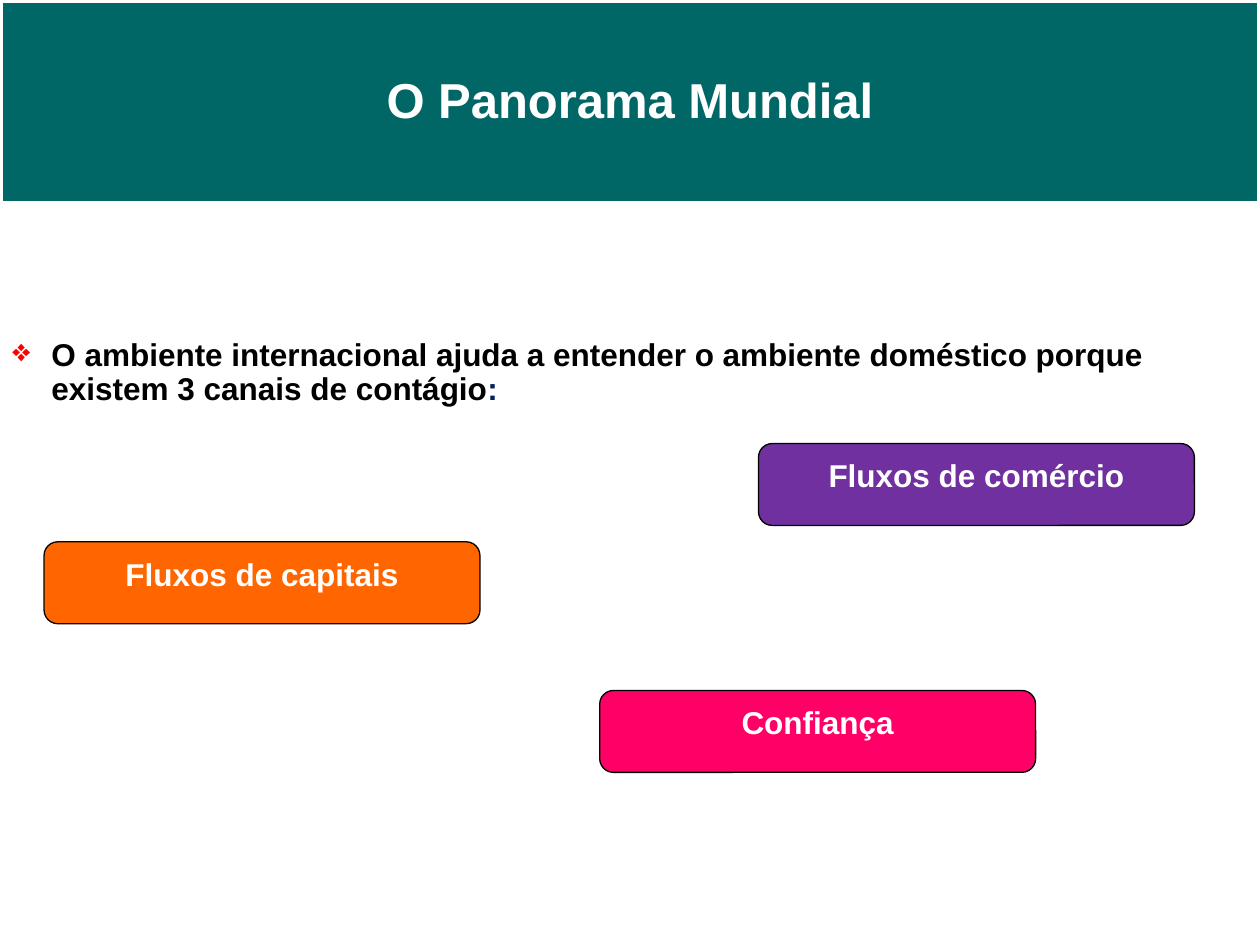
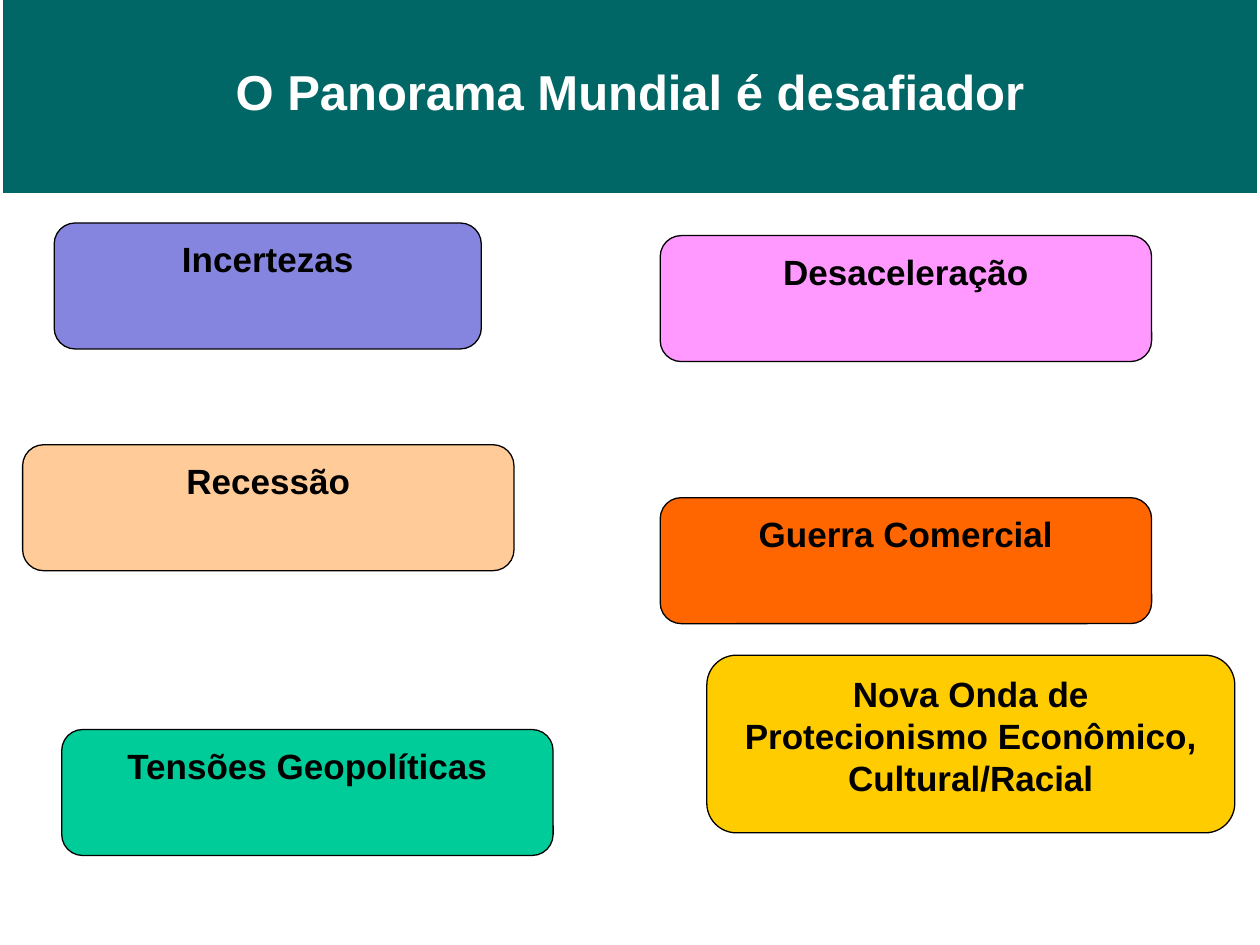
"""Build two slides on the world outlook and its channels of contagion."""
import pptx
import pptx.dml.color
import pptx.enum.shapes
import pptx.enum.text
import pptx.util
import lxml.etree
import pptx.oxml.ns

Inches = pptx.util.Inches
Pt = pptx.util.Pt
SHAPES = pptx.enum.shapes.MSO_SHAPE

TEAL, WHITE, BLACK, ORANGE = "006666", "FFFFFF", "000000", "FF6600"
BULLET_RED, NAVY = "FF0000", "002060"


def color(value):
    return pptx.dml.color.RGBColor.from_string(value)


def add_box(slide, kind, position, text, fill, line, size, font_color, top_inset):
    shape = slide.shapes.add_shape(kind, *[Inches(length) for length in position])
    shape.shadow.inherit = False
    shape.fill.solid()
    shape.fill.fore_color.rgb = color(fill)
    line_color, line_width = line
    shape.line.color.rgb = color(line_color)
    shape.line.width = Pt(line_width)
    frame = shape.text_frame
    frame.word_wrap = True
    frame.vertical_anchor = pptx.enum.text.MSO_ANCHOR.TOP
    frame.margin_top = Inches(top_inset)
    paragraph = frame.paragraphs[0]
    paragraph.text = text
    paragraph.alignment = pptx.enum.text.PP_ALIGN.CENTER
    paragraph.font.name = "Arial"
    paragraph.font.size = Pt(size)
    paragraph.font.bold = True
    paragraph.font.color.rgb = color(font_color)


presentation = pptx.Presentation()
presentation.slide_width = Inches(10)
presentation.slide_height = Inches(7.5)

channels = [
    ("Fluxos de comércio", (6.02, 3.52, 3.46, 0.65), "7030A0"),
    ("Fluxos de capitais", (0.35, 4.3, 3.46, 0.65), ORANGE),
    ("Confiança", (4.76, 5.48, 3.46, 0.65), "FF0066"),
]
challenges = [
    ("Incertezas", (0.43, 1.77, 3.39, 1), "8585E0"),
    ("Desaceleração", (5.24, 1.87, 3.9, 1), "FF99FF"),
    ("Recessão", (0.18, 3.53, 3.9, 1), "FFCC99"),
    ("Guerra Comercial", (5.24, 3.95, 3.9, 1), ORANGE),
    ("Tensões Geopolíticas", (0.49, 5.79, 3.9, 1), "00CC99"),
    ("Nova Onda de Protecionismo Econômico, Cultural/Racial", (5.61, 5.2, 4.19, 1.41), "FFCC00"),
]
contents = [
    ("O Panorama Mundial", (0, 0, 10, 1.62), channels, 18, WHITE),
    ("O Panorama Mundial é desafiador", (0, -0.06, 10, 1.61), challenges, 20, BLACK),
]

for title, band, boxes, size, font_color in contents:
    slide = presentation.slides.add_slide(presentation.slide_layouts[6])
    add_box(slide, SHAPES.RECTANGLE, band, title, TEAL, (WHITE, 3), 28, WHITE, 0.55)
    for text, position, fill in boxes:
        add_box(slide, SHAPES.ROUNDED_RECTANGLE, position, text, fill, (BLACK, 0.75), size, font_color, 0.07)

introduction = presentation.slides[0].shapes.add_textbox(Inches(0), Inches(2.64), Inches(9.76), Inches(0.65))
introduction.text_frame.word_wrap = True
paragraph = introduction.text_frame.paragraphs[0]
paragraph.line_spacing = 0.9
paragraph.font.name = "Arial"
paragraph.font.size = Pt(18)
paragraph.font.bold = True
for text, run_color in [
    ("O ambiente internacional ajuda a entender o ambiente doméstico porque existem 3 canais de contágio", BLACK),
    (":", NAVY),
]:
    run = paragraph.add_run()
    run.text = text
    run.font.color.rgb = color(run_color)

properties = paragraph._p.get_or_add_pPr()
properties.set("marL", str(Inches(0.31)))
properties.set("indent", str(-Inches(0.31)))
bullet_color = lxml.etree.Element(pptx.oxml.ns.qn("a:buClr"))
lxml.etree.SubElement(bullet_color, pptx.oxml.ns.qn("a:srgbClr"), val=BULLET_RED)
bullet = lxml.etree.Element(pptx.oxml.ns.qn("a:buChar"), char="❖")
properties.find(pptx.oxml.ns.qn("a:lnSpc")).addnext(bullet_color)
bullet_color.addnext(bullet)

presentation.save("out.pptx")
